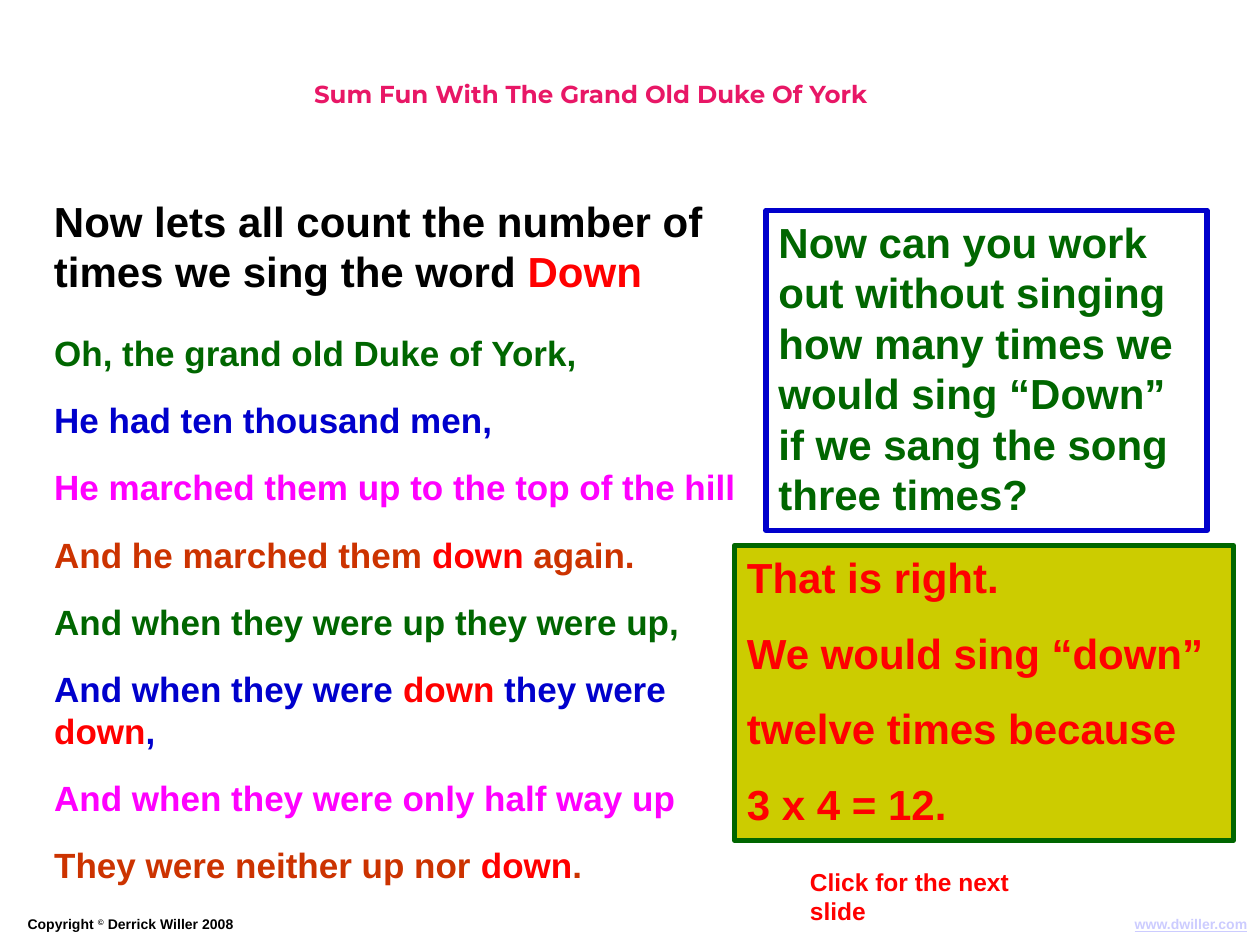
from lxml import etree
from pptx import Presentation
from pptx.dml.color import RGBColor
from pptx.enum import shapes, text
from pptx.oxml.ns import qn
from pptx.util import Inches, Pt

GREEN, BLUE, PINK, RUST = "006600", "0000CC", "FF00FF", "CC3300"
RED, BLACK, WHITE, OLIVE = "FF0000", "000000", "FFFFFF", "CCCC00"
VERSE = [
    ("Oh, the grand old Duke of York,", GREEN),
    ("He had ten thousand men,", BLUE),
    ("He marched them up to the top of the hill", PINK),
    ("And he marched them |down| again.", RUST),
    ("And when they were up they were up,", GREEN),
    ("And when they were |down| they were |down|,", BLUE),
    ("And when they were only half way up", PINK),
    ("They were neither up nor |down|.", RUST),
]
ANSWER = ["That is right.", "We would sing “down”", "twelve times because", "3 x 4 = 12."]


def color(value):
    return RGBColor.from_string(value)


def place(part, box):
    part.left, part.top, part.width, part.height = map(Inches, box)


def write(part, lines, size, gap=0, font="Arial", align=text.PP_ALIGN.LEFT):
    frame = part.text_frame
    frame_format = {"word_wrap": True, "auto_size": text.MSO_AUTO_SIZE.NONE,
                    "vertical_anchor": text.MSO_ANCHOR.TOP}
    for name, value in frame_format.items():
        setattr(frame, name, value)
    for index, (line, ink) in enumerate(lines):
        paragraph = frame.add_paragraph() if index else frame.paragraphs[0]
        paragraph_format = {"alignment": align, "line_spacing": Pt(size * 1.2),
                            "space_before": Pt(gap if index else 0), "space_after": Pt(0)}
        for name, value in paragraph_format.items():
            setattr(paragraph, name, value)
        for order, words in enumerate(line.split("|")):
            if not words:
                continue
            run = paragraph.add_run()
            run.text = words
            for name, value in {"name": font, "size": Pt(size), "bold": True}.items():
                setattr(run.font, name, value)
            run.font.color.rgb = color(RED if order % 2 else ink)
    return frame


def add_heading(slide, box):
    heading = slide.shapes.title
    place(heading, box)
    write(heading, [("Sum Fun With The Grand Old Duke Of York", "E81766")], 14,
          font="Montserrat", align=text.PP_ALIGN.CENTER)


def add_verse(slide, box):
    verse = slide.placeholders[1]
    place(verse, box)
    for paragraph in write(verse, VERSE, 20, gap=14.4).paragraphs:
        properties = paragraph._p.get_or_add_pPr()
        properties.set("marL", "0")
        properties.set("indent", "0")
        etree.SubElement(properties, qn("a:buNone"))


def add_note(slide, box, lines, size, **style):
    note = slide.shapes.add_textbox(*map(Inches, box))
    return write(note, lines, size, **style)


def add_panel(slide, box, lines, size, fill, border=None, gap=0):
    panel = slide.shapes.add_shape(shapes.MSO_SHAPE.RECTANGLE, *map(Inches, box))
    panel.shadow.inherit = False
    panel.fill.solid()
    panel.fill.fore_color.rgb = color(fill)
    if border:
        panel.line.color.rgb = color(border)
        panel.line.width = Pt(3)
    else:
        panel.line.fill.background()
    write(panel, lines, size, gap=gap)


def add_footer(slide, left, top, width, height):
    split = 5.65
    notice = add_note(slide, (left, top, split, height),
                      [("Copyright |©| Derrick Willer 2008", BLACK)], 8)
    symbol = notice.paragraphs[0].runs[1].font
    symbol.color.rgb = color(BLACK)
    symbol._element.set("baseline", "30000")
    site_width = 1.34
    site = add_note(slide, (left + width - site_width, top, site_width, height),
                    [("www.dwiller.com", "CCCCFF")], 8, align=text.PP_ALIGN.RIGHT)
    site.paragraphs[0].runs[0].font.underline = True


def main():
    deck = Presentation()
    deck.slide_width, deck.slide_height = Inches(10), Inches(7.5)
    slide = deck.slides.add_slide(deck.slide_layouts[1])
    add_heading(slide, (2.09, 0.58, 5.2, 0.5))
    add_footer(slide, 0.12, 7.22, 9.88, 0.24)
    add_verse(slide, (0.33, 2.58, 5.92, 4.5))
    add_note(slide, (0.33, 1.5, 6, 0.9),
             [("Now lets all count the number of times we sing the word |Down", BLACK)], 24)
    add_panel(slide, (6.08, 1.67, 3.5, 2.54),
              [("Now can you work out without singing how many times we would sing "
                "“Down” if we sang the song three times?", GREEN)], 24, WHITE, BLUE)
    add_panel(slide, (5.83, 4.33, 3.96, 2.34), [(line, RED) for line in ANSWER],
              24, OLIVE, GREEN, gap=14.4)
    add_panel(slide, (6.33, 6.83, 2.27, 0.33), [("Click for the next slide", RED)], 14, WHITE)
    deck.save("out.pptx")


if __name__ == "__main__":
    main()
